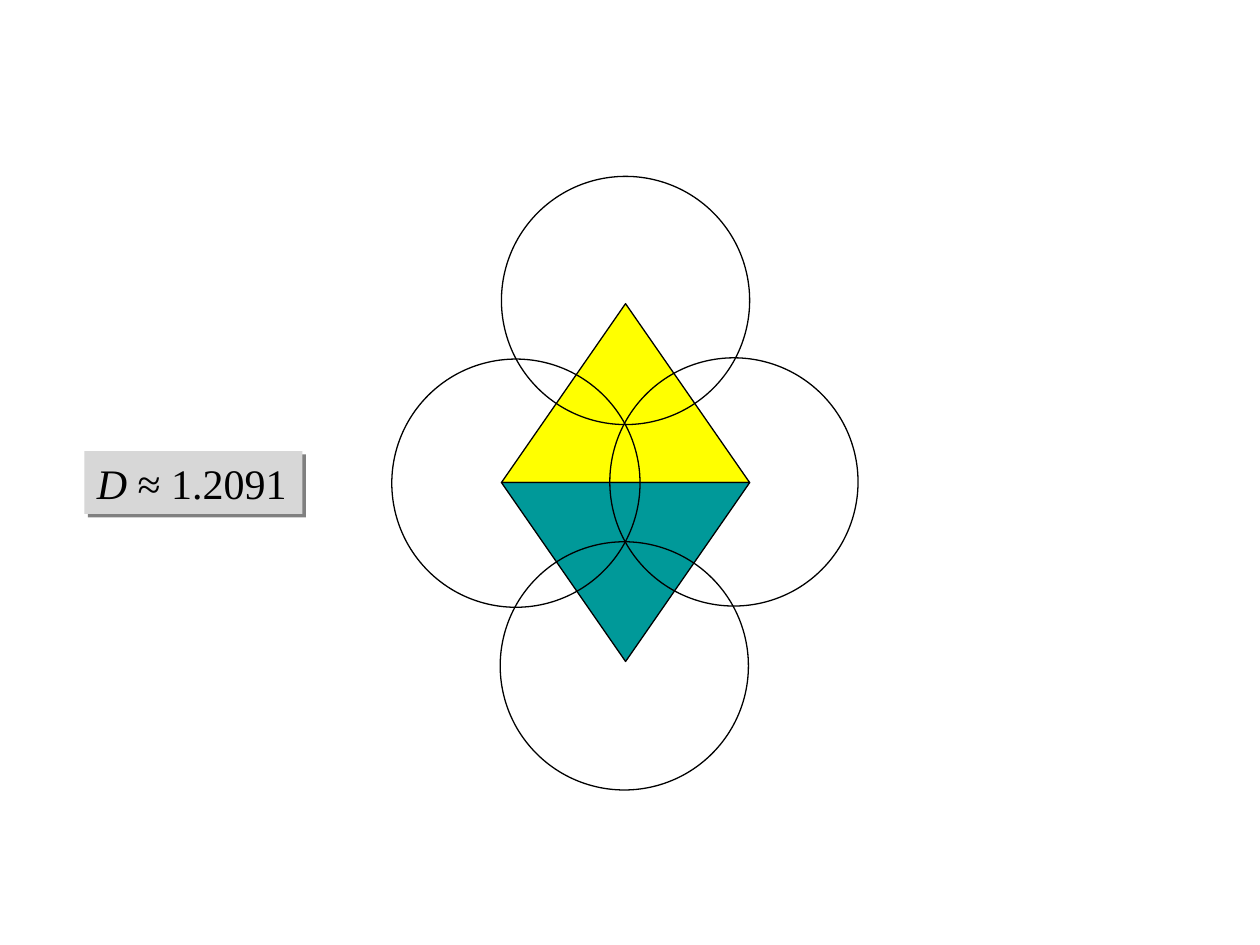
"""Build a slide of four overlapping circles around a rhombus, with its density."""

from dataclasses import dataclass

from lxml import etree
from pptx import Presentation
from pptx.dml.color import RGBColor
from pptx.enum.shapes import MSO_SHAPE
from pptx.enum.text import MSO_AUTO_SIZE
from pptx.oxml.ns import qn
from pptx.util import Inches, Pt

TRIANGLE = MSO_SHAPE.ISOSCELES_TRIANGLE
CIRCLE = MSO_SHAPE.OVAL
FIT_SHAPE = MSO_AUTO_SIZE.SHAPE_TO_FIT_TEXT


@dataclass(frozen=True)
class Theme:
    ink: str = "000000"
    upper: str = "FFFF00"
    lower: str = "009999"
    label: str = "D7D7D7"
    shadow: str = "808080"
    font: str = "Times New Roman"
    text_size: float = 24
    outline: float = 0.75
    shadow_distance: float = 2.83
    shadow_angle: int = 45


@dataclass(frozen=True)
class Triangle:
    top: float
    color: str
    rotation: int


@dataclass(frozen=True)
class Circle:
    left: float
    top: float


THEME = Theme()
DIAMETER = 1.97
RHOMBUS_LEFT = 3.98
RHOMBUS_TOP = 2.41
TRIANGLE_HEIGHT = 1.42
TRIANGLES = (
    Triangle(RHOMBUS_TOP, THEME.upper, 0),
    Triangle(RHOMBUS_TOP + TRIANGLE_HEIGHT, THEME.lower, 180),
)
CIRCLES = (
    Circle(3.11, 2.85),
    Circle(4.84, 2.84),
    Circle(3.97, 4.3),
    Circle(3.98, 1.4),
)


def outline(shape) -> None:
    """Give a shape the thin black outline without a shadow."""
    shape.shadow.inherit = False
    shape.line.color.rgb = RGBColor.from_string(THEME.ink)
    shape.line.width = Pt(THEME.outline)


def draw_triangle(slide, triangle: Triangle) -> None:
    """Draw one half of the rhombus."""
    half = slide.shapes.add_shape(
        TRIANGLE, Inches(RHOMBUS_LEFT), Inches(triangle.top), Inches(DIAMETER), Inches(TRIANGLE_HEIGHT)
    )
    half.rotation = triangle.rotation
    half.fill.solid()
    half.fill.fore_color.rgb = RGBColor.from_string(triangle.color)
    outline(half)


def draw_circle(slide, circle: Circle) -> None:
    """Draw one unfilled circle."""
    ring = slide.shapes.add_shape(
        CIRCLE, Inches(circle.left), Inches(circle.top), Inches(DIAMETER), Inches(DIAMETER)
    )
    ring.fill.background()
    outline(ring)


def cast_shadow(shape) -> None:
    """Add a hard offset shadow to a shape."""
    effects = etree.SubElement(shape.element.spPr, qn("a:effectLst"))
    shadow = etree.SubElement(
        effects,
        qn("a:outerShdw"),
        dist=str(Pt(THEME.shadow_distance)),
        dir=str(THEME.shadow_angle * 60000),
        algn="ctr",
        rotWithShape="0",
    )
    etree.SubElement(shadow, qn("a:srgbClr"), val=THEME.shadow)


def draw_density(slide) -> None:
    """Draw the density label."""
    label = slide.shapes.add_textbox(Inches(0.67), Inches(3.58), Inches(1.73), Inches(0.5))
    label.fill.solid()
    label.fill.fore_color.rgb = RGBColor.from_string(THEME.label)
    cast_shadow(label)
    label.text_frame.auto_size = FIT_SHAPE
    label.text_frame.word_wrap = False
    formula = label.text_frame.paragraphs[0]
    formula.font.name = THEME.font
    formula.font.size = Pt(THEME.text_size)
    formula.font.color.rgb = RGBColor.from_string(THEME.ink)
    symbol = formula.add_run()
    symbol.text = "D "
    symbol.font.italic = True
    formula.add_run().text = "≈ 1.2091"


def main() -> None:
    """Create the slide and save it."""
    presentation = Presentation()
    presentation.slide_width = Inches(10)
    presentation.slide_height = Inches(7.5)
    slide = presentation.slides.add_slide(presentation.slide_layouts[6])
    for triangle in TRIANGLES:
        draw_triangle(slide, triangle)
    for circle in CIRCLES:
        draw_circle(slide, circle)
    draw_density(slide)
    presentation.save("out.pptx")


if __name__ == "__main__":
    main()
